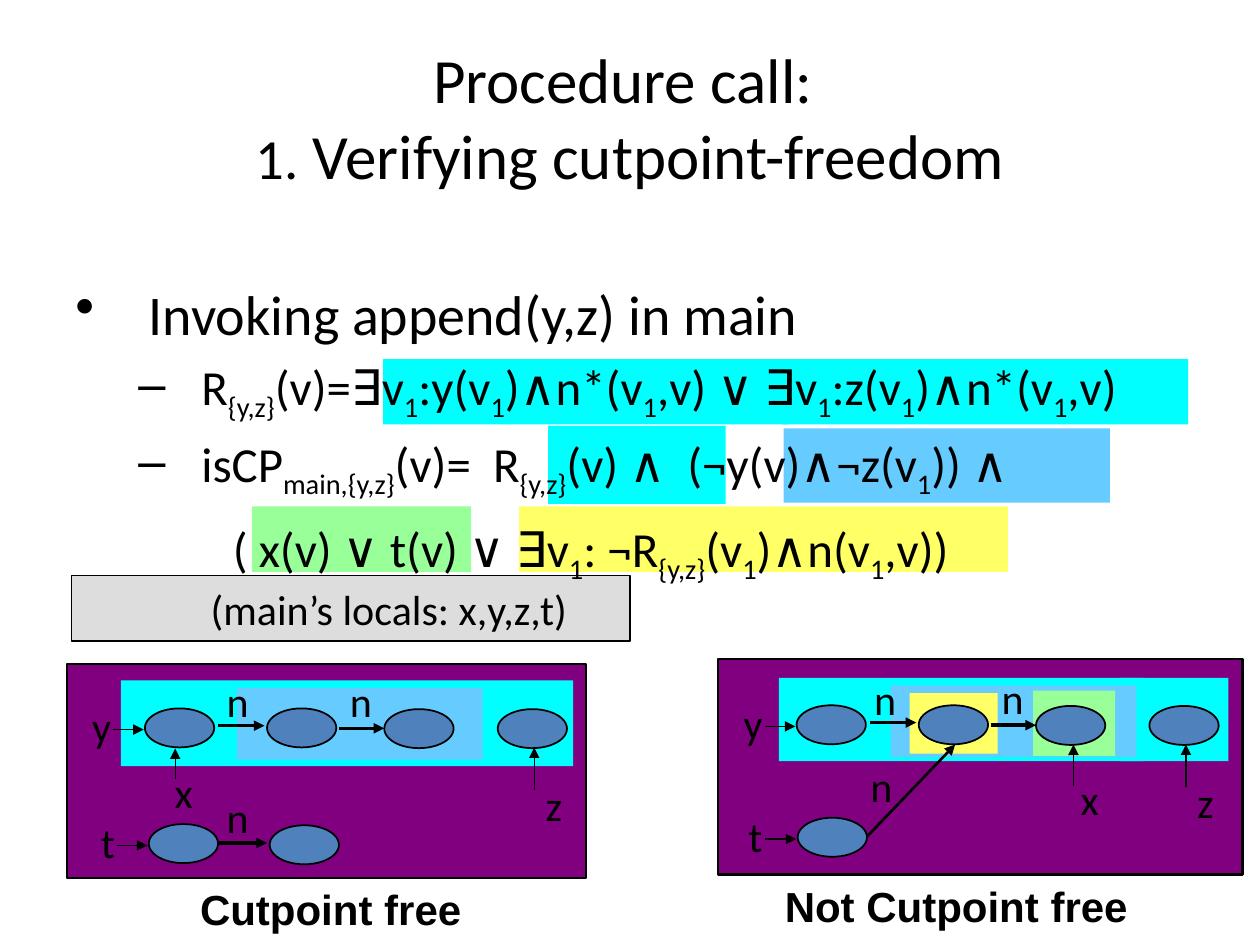
import pptx
import pptx.util
import pptx.dml.color
import pptx.enum.shapes
import pptx.enum.text
import pptx.oxml.ns
import lxml.etree

Pt = pptx.util.Pt
SHAPE = pptx.enum.shapes.MSO_SHAPE
ALIGN = pptx.enum.text.PP_ALIGN
ANCHOR = pptx.enum.text.MSO_ANCHOR
qn = pptx.oxml.ns.qn

COLORS = dict(black="000000", purple="800080", cyan="00FFFF", blue="66CCFF",
              green="99FF99", yellow="FFFF66", gray="DDDDDD", node="4F81BD")

BANDS = [
    ("purple", 410.4, 376.6, 299.5, 123.1, 1.5),
    ("cyan", 445, 387.4, 208.1, 47.5, 0),
    ("cyan", 640.1, 387.4, 61.9, 47.5, 0),
    ("blue", 509, 391.7, 140.4, 41, 0),
    ("green", 590.4, 394.6, 46.8, 37.4, 0),
    ("yellow", 519.8, 396, 50.4, 34.6, 0),
    ("purple", 38.2, 379.4, 296.6, 122.4, 1.5),
    ("cyan", 69.1, 388.8, 208.1, 49, 0),
    ("cyan", 277.2, 388.8, 50.4, 49, 0),
    ("blue", 135.4, 393.1, 140.4, 41, 0),
    ("yellow", 296.6, 289.4, 279.4, 37.4, 0),
    ("green", 144, 289.4, 125.3, 37.4, 0),
    ("blue", 447.8, 244.8, 186.5, 42.5, 0),
    ("cyan", 447.1, 205.2, 231.8, 37.4, 0),
    ("cyan", 218.9, 205.2, 231.8, 37.4, 0),
    ("cyan", 313.2, 243.4, 101.5, 44.6, 0),
]

SHARED = dict(
    nodes=[(82.8, 404.8), (152.6, 404.8), (219.6, 405.2), (284.4, 405.2)],
    labels=[("y", 41, 396.7, 29.5), ("n", 188.6, 382.3, 35.3), ("z", 294.5, 442.1, 33.8)],
    arrows=[(64.8, 416.9, 82.1, 416.9, 0.75), (124.6, 414.7, 151.2, 414.7, 2),
            (193.7, 416.2, 219.6, 416.2, 2), (305.3, 451.4, 305.3, 427.2, 0.75)],
)
FREE = dict(
    nodes=[(85, 470.9), (154.1, 471.6)],
    labels=[("t", 43.2, 463, 29.5), ("x", 87.8, 434.2, 29.5),
            ("n", 118.1, 382.3, 35.3), ("n", 118.1, 448.6, 35.3)],
    arrows=[(67, 483.1, 84.2, 483.1, 0.75), (125.3, 481.7, 152.6, 481.7, 2),
            (100.1, 445, 100.1, 427.7, 0.75)],
)
NOT_FREE = dict(
    nodes=[(455.8, 467.3)],
    labels=[("t", 413.3, 459.4, 29.5), ("x", 601.2, 438.5, 33.8),
            ("n", 488.2, 381.6, 35.3), ("n", 486, 431.3, 35.3)],
    arrows=[(437, 479.5, 455, 479.5, 0.75), (613.4, 449.3, 613.4, 425.5, 0.75),
            (495.4, 478.1, 545.8, 425.5, 1.5)],
)
GRAPHS = [(SHARED, 0, 0), (FREE, 0, 0), (SHARED, 372.4, -1.8), (NOT_FREE, 0, 0)]

CAPTIONS = [("Cutpoint free", 81.4, 504.7, 218.2), ("Not Cutpoint free", 425.5, 503.3, 254.9)]

# bullet, left margin, hanging indent, size, space before, text with _subscripts_
BODY = [
    ("•", 41.8, -41.8, 32, 6.4, "Invoking append(y,z) in main"),
    ("–", 72, -36, 28, 5.6,
     "R_{y,z}_(v)=∃v_1_:y(v_1_)∧n*(v_1_,v) ∨ ∃v_1_:z(v_1_)∧n*(v_1_,v)"),
    ("–", 72, -36, 28, 5.6, "isCP_main,{y,z}_(v)=  R_{y,z}_(v) ∧  (¬y(v)∧¬z(v_1_)) ∧"),
    (None, 90, 0, 28, 10.4, "( x(v) ∨ t(v) ∨ ∃v_1_: ¬R_{y,z}_(v_1_)∧n(v_1_,v))"),
]


def rgb(name):
    return pptx.dml.color.RGBColor.from_string(COLORS[name])


def style(font, size, name="Calibri", bold=False):
    font.size, font.name, font.bold = Pt(size), name, bold
    font.color.rgb = rgb("black")


def add_block(s, kind, color, x, y, w, h, line):
    sp = s.shapes.add_shape(kind, Pt(x), Pt(y), Pt(w), Pt(h))
    sp.shadow.inherit = False
    sp.fill.solid()
    sp.fill.fore_color.rgb = rgb(color)
    if line:
        sp.line.color.rgb = rgb("black")
        sp.line.width = Pt(line)
    else:
        sp.line.fill.background()
    return sp


def set_text(sp, text, align, name="Calibri", bold=False):
    tf = sp.text_frame
    tf.word_wrap = True
    p = tf.paragraphs[0]
    p.text, p.alignment = text, align
    style(p.font, 24, name, bold)
    return tf


def set_margins(tf, right):
    tf.margin_left = tf.margin_top = tf.margin_bottom = 0
    tf.margin_right = Pt(right)
    tf.vertical_anchor = ANCHOR.MIDDLE


def add_arrow(s, x1, y1, x2, y2, width):
    c = s.shapes.add_connector(pptx.enum.shapes.MSO_CONNECTOR.STRAIGHT,
                               Pt(x1), Pt(y1), Pt(x2), Pt(y2))
    c.line.color.rgb = rgb("black")
    c.line.width = Pt(width)
    lxml.etree.SubElement(c.line._get_or_add_ln(), qn("a:tailEnd"), type="triangle")
    lxml.etree.SubElement(c._element.spPr, qn("a:effectLst"))


def add_graph(s, graph, dx, dy):
    for x, y in graph["nodes"]:
        add_block(s, SHAPE.OVAL, "node", x + dx, y + dy, 39.6, 22.3, 1)
    for text, x, y, w in graph["labels"]:
        sp = s.shapes.add_textbox(Pt(x + dx), Pt(y + dy), Pt(w), Pt(36))
        set_text(sp, text, ALIGN.CENTER if text == "n" else ALIGN.RIGHT)
    for x1, y1, x2, y2, width in graph["arrows"]:
        add_arrow(s, x1 + dx, y1 + dy, x2 + dx, y2 + dy, width)


def add_body(s):
    tf = s.shapes.add_textbox(Pt(36), Pt(156.2), Pt(684), Pt(306)).text_frame
    tf.word_wrap = True
    for i, (bullet, left, indent, size, before, text) in enumerate(BODY):
        p = tf.add_paragraph() if i else tf.paragraphs[0]
        p.space_before = Pt(before)
        style(p.font, size)
        pPr = p._p.get_or_add_pPr()
        pPr.set("marL", str(Pt(left)))
        pPr.set("indent", str(Pt(indent)))
        if bullet:
            bu = lxml.etree.Element(qn("a:buChar"), char=bullet)
            pPr.insert_element_before(bu, "a:tabLst", "a:defRPr", "a:extLst")
        for j, part in enumerate(text.split("_")):
            r = p.add_run()
            r.text = part
            if j % 2:
                r.font._element.set("baseline", "-25000")


def add_title(s):
    sp = s.shapes.title
    sp.left, sp.top, sp.width, sp.height = Pt(36), Pt(21.6), Pt(648), Pt(90)
    tf = sp.text_frame
    tf.vertical_anchor = ANCHOR.MIDDLE
    p = tf.paragraphs[0]
    p.alignment = ALIGN.CENTER
    for text, size in [("Procedure call: ", 36), ("1.", 32.4), (" Verifying cutpoint-freedom", 36)]:
        r = p.add_run()
        r.text = text
        style(r.font, size)
        if text.startswith("Procedure"):
            p.add_line_break()


def main():
    prs = pptx.Presentation()
    prs.slide_width, prs.slide_height = Pt(720), Pt(540)
    s = prs.slides.add_slide(prs.slide_layouts[5])
    for color, x, y, w, h, line in BANDS:
        add_block(s, SHAPE.RECTANGLE, color, x, y, w, h, line)
    add_title(s)
    for graph, dx, dy in GRAPHS:
        add_graph(s, graph, dx, dy)
    sp = add_block(s, SHAPE.RECTANGLE, "gray", 41, 329, 319, 37.4, 0.75)
    set_margins(set_text(sp, "(main’s locals: x,y,z,t)", ALIGN.RIGHT), 36)
    for text, x, y, w in CAPTIONS:
        sp = s.shapes.add_textbox(Pt(x), Pt(y), Pt(w), Pt(28.8))
        set_margins(set_text(sp, text, ALIGN.RIGHT, "Arial", True), 36)
    add_body(s)
    prs.save("out.pptx")


if __name__ == "__main__":
    main()
